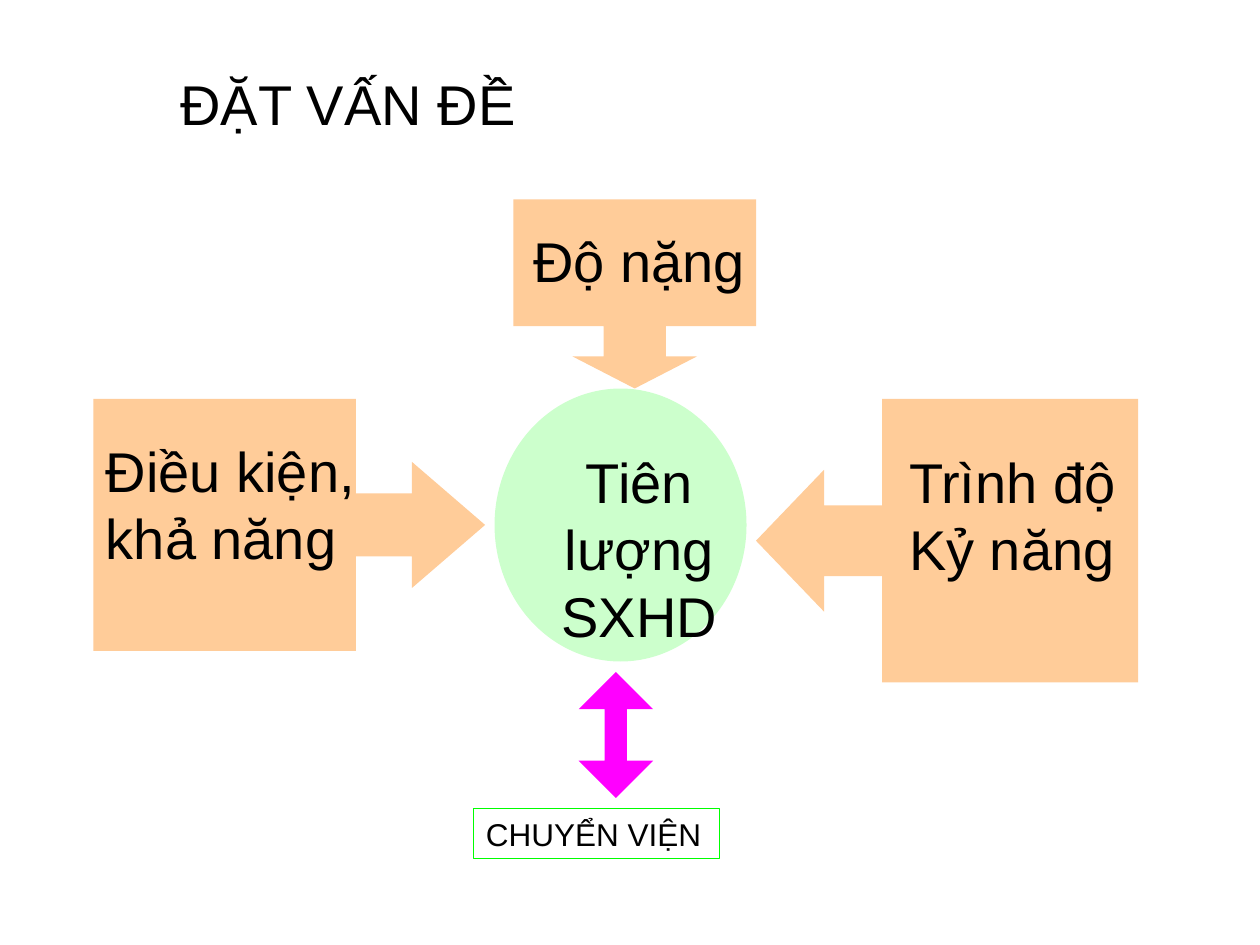
from pptx import Presentation
from pptx.dml.color import RGBColor
from pptx.enum.shapes import MSO_SHAPE
from pptx.enum.text import MSO_ANCHOR, MSO_AUTO_SIZE, PP_ALIGN
from pptx.util import Inches, Pt

ELLIPSE = MSO_SHAPE.OVAL
RECTANGLE = MSO_SHAPE.RECTANGLE
LEFT_CALLOUT = MSO_SHAPE.LEFT_ARROW_CALLOUT
RIGHT_CALLOUT = MSO_SHAPE.RIGHT_ARROW_CALLOUT
DOWN_CALLOUT = MSO_SHAPE.DOWN_ARROW_CALLOUT
DOUBLE_ARROW = MSO_SHAPE.UP_DOWN_ARROW
TOP = MSO_ANCHOR.TOP
FIT_SHAPE = MSO_AUTO_SIZE.SHAPE_TO_FIT_TEXT
LEFT, CENTER = PP_ALIGN.LEFT, PP_ALIGN.CENTER

COLUMNS, ROWS = 120, 90
PEACH, MINT, MAGENTA, GREEN, BLACK = "FFCC99", "CCFFCC", "FF00FF", "00FF00", "000000"


def color(value):
    """Turn a hex string into a colour."""
    return RGBColor.from_string(value)


class DiagramSlide:
    """Hold the style and the slide, and place elements on its grid."""

    font = "Arial"
    size = 32

    def __init__(self, presentation):
        self.slide = presentation.slides.add_slide(presentation.slide_layouts[6])
        self.column = presentation.slide_width / COLUMNS
        self.row = presentation.slide_height / ROWS

    def place(self, left, top, width, height):
        """Convert columns and rows into slide lengths."""
        return (round(left * self.column), round(top * self.row),
                round(width * self.column), round(height * self.row))

    def shape(self, kind, box, fill=None, line=None, adjustments=()):
        """Add a preset shape."""
        shape = self.slide.shapes.add_shape(kind, *self.place(*box))
        shape.shadow.inherit = False
        if fill:
            shape.fill.solid()
            shape.fill.fore_color.rgb = color(fill)
        else:
            shape.fill.background()
        if line:
            shape.line.color.rgb = color(line)
            shape.line.width = Pt(0.75)
        else:
            shape.line.fill.background()
        for index, value in enumerate(adjustments):
            shape.adjustments[index] = value
        return shape

    def set_text(self, shape, text, size, align=LEFT, wrap=True):
        """Set and format the text of a shape."""
        frame = shape.text_frame
        frame.text = text
        frame.word_wrap = wrap
        frame.auto_size = FIT_SHAPE
        frame.vertical_anchor = TOP
        for paragraph in frame.paragraphs:
            paragraph.alignment = align
            for run in paragraph.runs:
                run.font.name = self.font
                run.font.size = Pt(size)
                run.font.color.rgb = color(BLACK)

    def label(self, text, box, align=LEFT, wrap=True):
        """Add a text box."""
        shape = self.slide.shapes.add_textbox(*self.place(*box))
        self.set_text(shape, text, self.size, align, wrap)

    def framed_label(self, text, box, line, size):
        """Add a text in an outlined rectangle."""
        self.set_text(self.shape(RECTANGLE, box, line=line), text, size, wrap=False)


def main():
    """Build and save the prognosis diagram."""
    presentation = Presentation()
    presentation.slide_width = Inches(10)
    presentation.slide_height = Inches(7.5)
    diagram = DiagramSlide(presentation)

    diagram.shape(ELLIPSE, (47.1, 37, 24, 26), MINT)
    callouts = [
        (LEFT_CALLOUT, (72, 38, 36.4, 27), (0.25, 0.25, 0.24, 0.67)),
        (RIGHT_CALLOUT, (8.9, 38, 37.3, 24), (0.25, 0.25, 0.29, 0.67)),
        (DOWN_CALLOUT, (48.9, 19, 23.1, 18), (0.33, 0.33, 0.17, 0.67)),
    ]
    for kind, box, adjustments in callouts:
        diagram.shape(kind, box, PEACH, adjustments=adjustments)

    diagram.label("ĐẶT VẤN ĐỀ", (16, 6, 34.7, 7.7), wrap=False)
    diagram.label("Độ nặng", (49.6, 21, 33.1, 7.7))
    diagram.label("Tiên lượng\nSXHD", (47.1, 42, 27.6, 20.6), CENTER)
    diagram.label("Trình độ\nKỷ năng", (85.4, 42, 24.8, 14.1))
    diagram.label("Điều kiện,\nkhả năng", (8.9, 41, 30.4, 14.1))

    diagram.framed_label("CHUYỂN VIỆN", (45.1, 77, 23.4, 4.8), GREEN, 18)
    diagram.shape(DOUBLE_ARROW, (55.1, 64, 7.1, 12), MAGENTA, adjustments=(0.5, 0.3))
    presentation.save("out.pptx")


if __name__ == "__main__":
    main()
